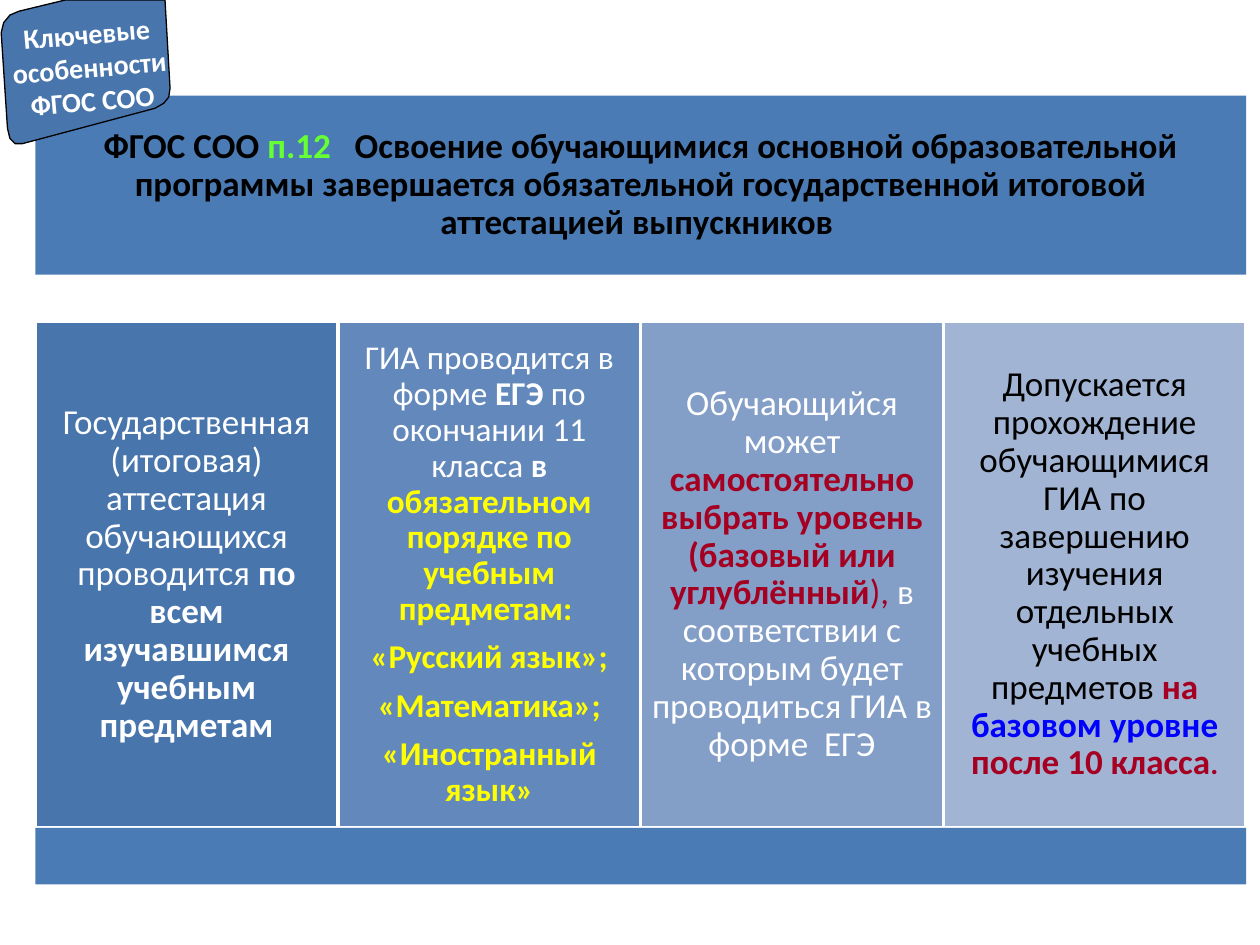
from pptx import Presentation
from pptx.dml.color import RGBColor
from pptx.enum.shapes import MSO_SHAPE
from pptx.enum.text import MSO_ANCHOR, PP_ALIGN
from pptx.util import Inches, Pt

RECTANGLE = MSO_SHAPE.RECTANGLE
MIDDLE = MSO_ANCHOR.MIDDLE
CENTER = PP_ALIGN.CENTER

COLORS = {
    "band": "4B7BB5", "badge": "4875AC", "white": "FFFFFF", "black": "000000",
    "green": "66FF33", "yellow": "FFFF00", "red": "A50021", "blue": "0000FF",
}

# Content: each paragraph is a list of (text, colour, bold[, size]) runs
HEADING = [[
    ("ФГОС СОО ", "black", True),
    ("п.12 ", "green", True),
    ("  Освоение обучающимися основной образовательной программы завершается "
     "обязательной государственной итоговой аттестацией выпускников ", "black", True),
]]
COLUMNS = [
    {"fill": "4875AC", "size": 20, "paras": [[
        ("Государственная (итоговая) аттестация обучающихся проводится ", "white", False),
        ("по всем изучавшимся учебным предметам", "white", True),
    ]]},
    {"fill": "6389BC", "size": 19, "paras": [
        [("ГИА проводится в форме ", "white", False),
         ("ЕГЭ ", "white", True),
         ("по окончании 11 класса ", "white", False),
         ("в ", "white", True),
         ("обязательном порядке по учебным предметам: ", "yellow", True)],
        [("«Русский язык»;", "yellow", True)],
        [("«Математика»;", "yellow", True)],
        [("«Иностранный язык»", "yellow", True)],
    ]},
    {"fill": "839EC7", "size": 20, "paras": [[
        ("Обучающийся может ", "white", False),
        ("самостоятельно выбрать уровень (базовый или углублённый", "red", True),
        ("), ", "red", False),
        ("в соответствии с которым будет проводиться ГИА в форме  ЕГЭ", "white", False),
    ]]},
    {"fill": "A2B4D4", "size": 20, "paras": [[
        ("Допускается прохождение обучающимися ГИА по завершению изучения "
         "отдельных учебных предметов ", "black", False),
        ("на ", "red", True),
        ("базовом уровне ", "blue", True),
        ("после 10 класса", "red", True),
        (".", "red", True, 17),
    ]]},
]
BADGE = [[("Ключевые особенности ФГОС СОО", "white", True)]]
BADGE_OUTLINE = [
    (0.01, 0.26), (0.03, 0.18), (0.08, 0.12), (0.15, 0.09), (0.52, 0), (1.31, 0),
    (1.35, 0.7), (1.34, 0.77), (1.3, 0.82), (1.23, 0.86), (0.18, 1.14),
    (0.12, 1.14), (0.08, 1.1), (0.06, 1.02),
]

# Layout in inches
LEFT, WIDTH = 0.28, 9.61
HEADING_TOP, HEADING_HEIGHT = 0.76, 1.42
COLUMN_TOP, COLUMN_HEIGHT = 2.55, 4.02
FOOTER_HEIGHT = 0.45


def color(hex_value):
    return RGBColor.from_string(hex_value)


def write(box, paras, size, inset=0.08, spacing=0.9, after=7):
    frame = box.text_frame
    settings = {"word_wrap": True, "vertical_anchor": MIDDLE}
    for side in ("left", "top", "right", "bottom"):
        settings[f"margin_{side}"] = Inches(inset)
    for name, value in settings.items():
        setattr(frame, name, value)
    for index, runs in enumerate(paras):
        para = frame.add_paragraph() if index else frame.paragraphs[0]
        para.alignment = CENTER
        para.line_spacing = spacing
        para.space_after = Pt(after)
        for text, tint, bold, *own_size in runs:
            span = para.add_run()
            span.text = text
            formats = {"name": "Calibri", "bold": bold,
                       "size": Pt(own_size[0] if own_size else size)}
            for name, value in formats.items():
                setattr(span.font, name, value)
            span.font.color.rgb = color(COLORS[tint])


def paint(shape, fill, line=None, line_width=2):
    shape.shadow.inherit = False
    shape.fill.solid()
    shape.fill.fore_color.rgb = color(fill)
    if line:
        shape.line.color.rgb = color(line)
        shape.line.width = Pt(line_width)
    else:
        shape.line.fill.background()


def add_block(page, left, top, width, height, fill, line=None):
    block = page.shapes.add_shape(
        RECTANGLE, Inches(left), Inches(top), Inches(width), Inches(height))
    paint(block, fill, line)
    return block


def main():
    deck = Presentation()
    deck.slide_width, deck.slide_height = Inches(10), Inches(7.5)
    page = deck.slides.add_slide(deck.slide_layouts[6])

    # Heading band
    heading = add_block(page, LEFT, HEADING_TOP, WIDTH, HEADING_HEIGHT, COLORS["band"])
    write(heading, HEADING, 20)

    # Four equal columns
    column_width = WIDTH / len(COLUMNS)
    for index, column in enumerate(COLUMNS):
        block = add_block(page, LEFT + index * column_width, COLUMN_TOP, column_width,
                          COLUMN_HEIGHT, column["fill"], COLORS["white"])
        write(block, column["paras"], column["size"])

    # Footer band
    add_block(page, LEFT, COLUMN_TOP + COLUMN_HEIGHT, WIDTH, FOOTER_HEIGHT, COLORS["band"])

    # Tilted corner badge with its label
    points = [(Inches(x), Inches(y)) for x, y in BADGE_OUTLINE]
    builder = page.shapes.build_freeform(*points[0])
    builder.add_line_segments(points[1:], close=True)
    paint(builder.convert_to_shape(), COLORS["badge"], COLORS["black"], 0.75)
    label = page.shapes.add_textbox(Inches(0.05), Inches(0.03), Inches(1.32), Inches(1))
    label.rotation = -5
    write(label, BADGE, 16, inset=0, spacing=1, after=0)

    deck.save("out.pptx")


if __name__ == "__main__":
    main()
